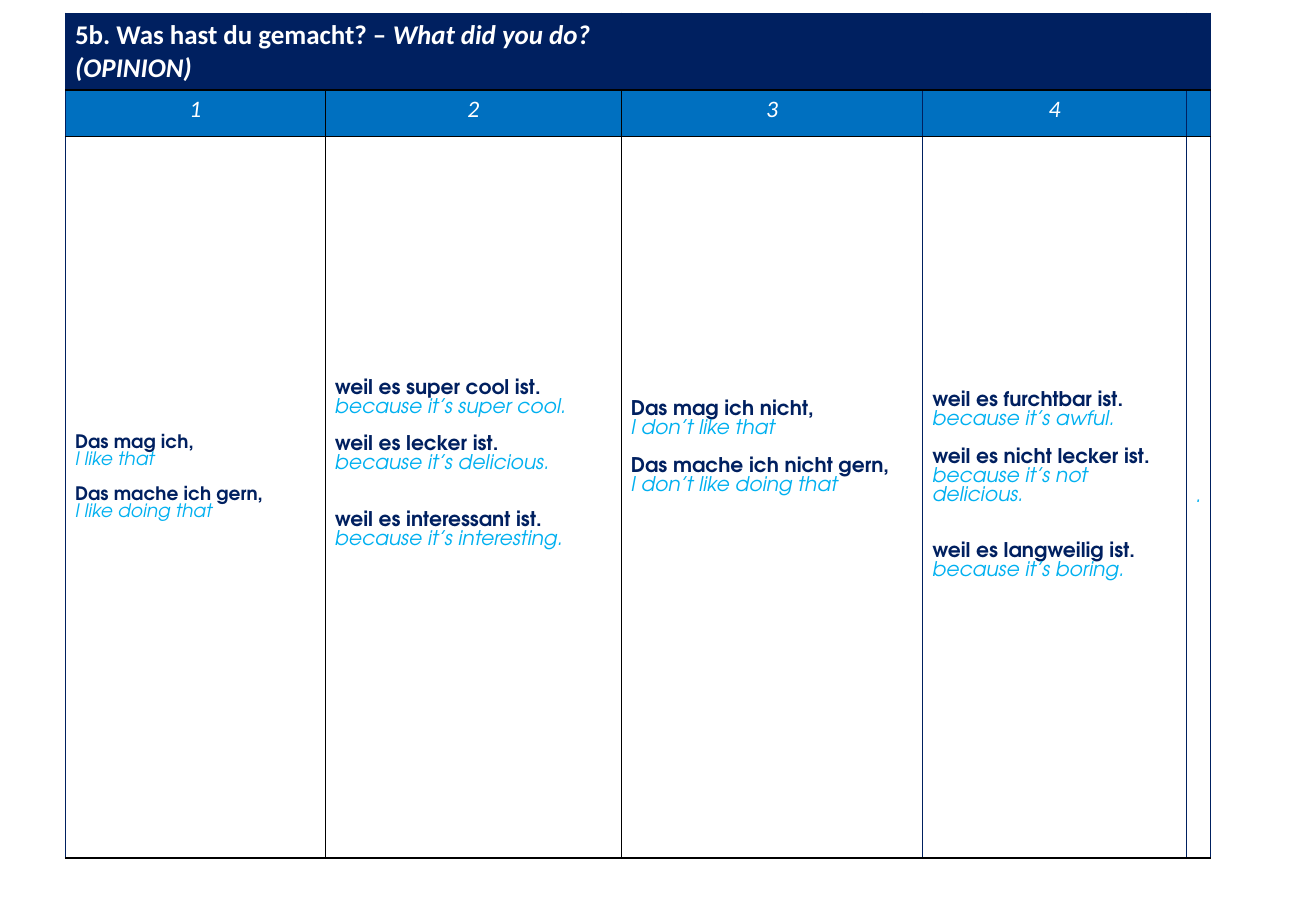
from lxml.etree import SubElement
from pptx import Presentation
from pptx.dml.color import RGBColor
from pptx.enum.text import MSO_ANCHOR, PP_ALIGN
from pptx.oxml.ns import qn
from pptx.util import Cm, Pt

# Content
TITLE = [("5b. Was hast du gemacht? – ", False), ("What did you do? (OPINION)", True)]
NUMBERS = ["1", "2", "3", "4", ""]
# Each phrase: German, English, empty lines above
PHRASES = [
    [("Das mag ich,", "I like that", 0),
     ("Das mache ich gern,", "I like doing that", 1)],
    [("weil es super cool ist.", "because it’s super cool.", 0),
     ("weil es lecker ist.", "because it’s delicious.", 1),
     ("weil es interessant ist.", "because it’s interesting.", 2)],
    [("Das mag ich nicht,", "I don’t like that", 0),
     ("Das mache ich nicht gern,", "I don’t like doing that", 1)],
    [("weil es furchtbar ist.", "because it’s awful.", 0),
     ("weil es nicht lecker ist.", "because it’s not delicious.", 1),
     ("weil es langweilig ist.", "because it’s boring.", 2)],
    [("", ".", 0)],
]
PHRASE_SIZES = [11, 12, 12, 12, 12]
PHRASE_LIFTS = [0.8, 1.38, 2.05, 0.46, 0]  # extra bottom margin, cm

# Style
NAVY = RGBColor(0x00, 0x20, 0x60)
BLUE = RGBColor(0x00, 0x70, 0xC0)
CYAN = RGBColor(0x00, 0xB0, 0xF0)
WHITE = RGBColor(0xFF, 0xFF, 0xFF)
BLACK = RGBColor(0x00, 0x00, 0x00)
HEADING_FONT, PHRASE_FONT = "Calibri", "TeX Gyre Adventor"
LINE_RATIO = 0.93

# Layout
COLUMN_WIDTHS = [5.43, 6.19, 6.3, 5.51, 0.51]
ROW_HEIGHTS = [1.6, 0.97, 15.09]
COLUMN_EDGES = [NAVY, BLACK, BLACK, NAVY, NAVY, NAVY]
ROW_EDGES = [NAVY, BLACK, BLACK, BLACK]
SIDE_MARGIN, END_MARGIN = 0.2, 0.1


def add_run(paragraph, text, font, size, color, bold=False, italic=False):
    run = paragraph.add_run()
    run.text = text
    run.font.name, run.font.size = font, Pt(size)
    run.font.bold, run.font.italic = bold, italic
    run.font.color.rgb = color


def style_cell(cell, fill, edges):
    cell.margin_left = cell.margin_right = Cm(SIDE_MARGIN)
    cell.margin_top = cell.margin_bottom = Cm(END_MARGIN)
    cell.text_frame.paragraphs[0].font.size = Pt(12)
    # Borders go before the fill in the cell properties
    properties = cell._tc.get_or_add_tcPr()
    for side, color in zip("LRTB", edges):
        border = SubElement(properties, qn(f"a:ln{side}"), w=str(Pt(1)))
        solid = SubElement(border, qn("a:solidFill"))
        SubElement(solid, qn("a:srgbClr"), val=str(color))
    cell.fill.solid()
    cell.fill.fore_color.rgb = fill


def add_phrases(cell, phrases, size, lift):
    cell.vertical_anchor = MSO_ANCHOR.MIDDLE
    cell.margin_bottom = Cm(END_MARGIN + lift)
    pitch = size * LINE_RATIO
    lines = [(text, gap, color, bold)
             for german, english, above in phrases
             for text, gap, color, bold in [(german, above, NAVY, True),
                                            (english, 0, CYAN, False)] if text]
    frame = cell.text_frame
    for i, (text, gap, color, bold) in enumerate(lines):
        paragraph = frame.add_paragraph() if i else frame.paragraphs[0]
        paragraph.line_spacing = Pt(pitch)
        if gap:
            paragraph.space_before = Pt(gap * pitch)
        add_run(paragraph, text, PHRASE_FONT, size, color, bold, not bold)


# Slide and table
prs = Presentation()
prs.slide_width, prs.slide_height = Cm(27.51), Cm(19.05)
slide = prs.slides.add_slide(prs.slide_layouts[6])
table = slide.shapes.add_table(
    len(ROW_HEIGHTS), len(COLUMN_WIDTHS), Cm(1.37), Cm(0.28),
    Cm(sum(COLUMN_WIDTHS)), Cm(sum(ROW_HEIGHTS))).table
for column, width in zip(table.columns, COLUMN_WIDTHS):
    column.width = Cm(width)
for row, height in zip(table.rows, ROW_HEIGHTS):
    row.height = Cm(height)

# Fills and borders
for r, fill in enumerate([NAVY, BLUE, WHITE]):
    for c in range(len(COLUMN_WIDTHS)):
        sides = COLUMN_EDGES[c:c + 2] if r else [NAVY, NAVY]
        style_cell(table.cell(r, c), fill, sides + ROW_EDGES[r:r + 2])

# Title
title = table.cell(0, 0)
title.merge(table.cell(0, 1))
title.vertical_anchor = MSO_ANCHOR.MIDDLE
for text, italic in TITLE:
    add_run(title.text_frame.paragraphs[0], text, HEADING_FONT, 16, WHITE, True, italic)

# Column numbers and phrases
for c, number in enumerate(NUMBERS):
    if number:
        heading = table.cell(1, c).text_frame.paragraphs[0]
        heading.alignment = PP_ALIGN.CENTER
        add_run(heading, number, HEADING_FONT, 14, WHITE, italic=True)
    add_phrases(table.cell(2, c), PHRASES[c], PHRASE_SIZES[c], PHRASE_LIFTS[c])

prs.save("out.pptx")
